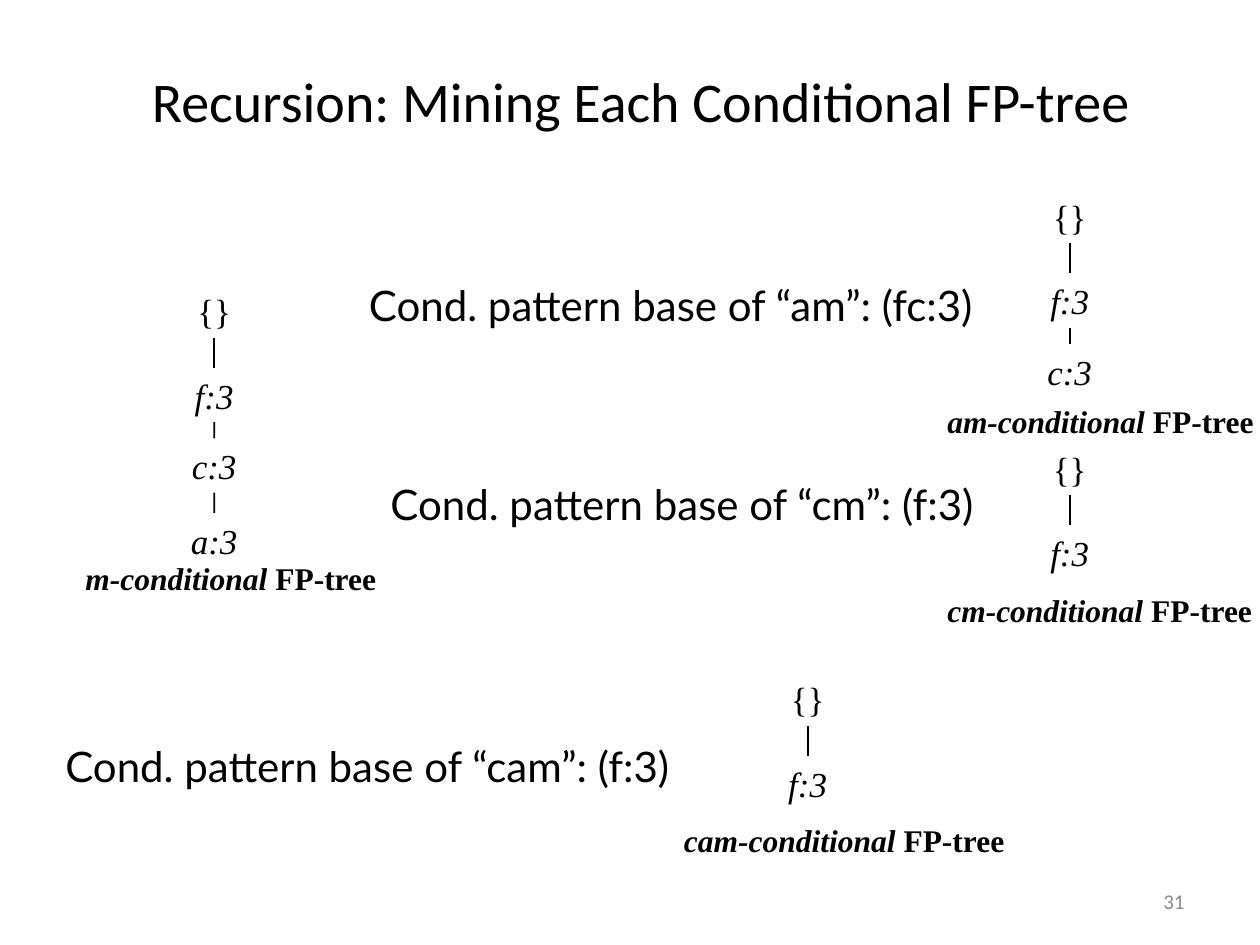
from pptx import Presentation
from pptx.dml.color import RGBColor
from pptx.enum.shapes import MSO_CONNECTOR
from pptx.enum.text import MSO_ANCHOR, MSO_AUTO_SIZE, PP_ALIGN
from pptx.util import Inches, Pt
from lxml import etree

LINE = MSO_CONNECTOR.STRAIGHT
MIDDLE = MSO_ANCHOR.MIDDLE
FIT = MSO_AUTO_SIZE.SHAPE_TO_FIT_TEXT
LEFT, CENTER, RIGHT = PP_ALIGN.LEFT, PP_ALIGN.CENTER, PP_ALIGN.RIGHT

COLORS = {"ink": "000000", "number": "8C8C8C"}
SERIF = "Times New Roman"
TITLE = "Recursion: Mining Each Conditional FP-tree"
NUMBER = "31"

# centre x, top, nodes below the root, name, label (left, top, width)
TREES = [
    (1.7, 2.25, ["f:3", "c:3", "a:3"], "m", (0.58, 4.39, 2.51)),
    (8.49, 1.5, ["f:3", "c:3"], "am", (7.42, 3.14, 2.64)),
    (8.49, 3.5, ["f:3"], "cm", (7.42, 4.64, 2.62)),
    (6.41, 5.33, ["f:3"], "cam", (5.33, 6.47, 2.75)),
]
# text, left, top, width
BASES = [
    ("Cond. pattern base of “am”: (fc:3)", 2.83, 2.17, 5.26),
    ("Cond. pattern base of “cm”: (f:3)", 3, 3.75, 5.09),
    ("Cond. pattern base of “cam”: (f:3)", 0.42, 5.83, 5.26),
]
DROPS = [0, 0.67, 1.23, 1.82]
WIDTHS = {"{}": 0.47, "f:3": 0.51, "c:3": 0.56, "a:3": 0.57}
NODE_H = 0.43
CXN_TOP, CXN_BOTTOM = 0, 2
NS = "http://schemas.openxmlformats.org/drawingml/2006/main"


def add_run(para, text, font, size, bold=False, italic=False, color="ink"):
    run = para.add_run()
    run.text = text
    run.font.name = font
    run.font.size = Pt(size)
    run.font.bold = bold
    run.font.italic = italic
    run.font.color.rgb = RGBColor.from_string(COLORS[color])


def add_box(shapes, left, top, width, height, align=LEFT):
    """Add a text box that fits its one line; return it and its paragraph."""
    box = shapes.add_textbox(*map(Inches, (left, top, width, height)))
    box.text_frame.word_wrap = False
    box.text_frame.auto_size = FIT
    para = box.text_frame.paragraphs[0]
    para.alignment = align
    return box, para


def add_edge(shapes, upper, lower):
    edge = shapes.add_connector(LINE, 0, 0, 0, 0)
    edge.begin_connect(upper, CXN_BOTTOM)
    edge.end_connect(lower, CXN_TOP)
    edge.line.width = Pt(1)
    edge.line.color.rgb = RGBColor.from_string(COLORS["ink"])
    etree.SubElement(edge._element.spPr, f"{{{NS}}}effectLst")


def add_tree(slide, mid, top, items, name, label):
    shapes = slide.shapes.add_group_shape().shapes
    nodes = []
    for text, drop in zip(["{}"] + items, DROPS):
        width = WIDTHS[text]
        node, para = add_box(shapes, mid - width / 2, top + drop, width, NODE_H, CENTER)
        add_run(para, text, SERIF, 20, italic=text != "{}")
        nodes.append(node)
    for upper, lower in zip(nodes, nodes[1:]):
        add_edge(shapes, upper, lower)
    para = add_box(shapes, *label, 0.4)[1]
    add_run(para, f"{name}-conditional ", SERIF, 18, bold=True, italic=True)
    add_run(para, "FP-tree", SERIF, 18, bold=True)


def main():
    deck = Presentation()
    deck.slide_width, deck.slide_height = Inches(10), Inches(7.5)
    slide = deck.slides.add_slide(deck.slide_layouts[5])

    title = slide.shapes.title
    title.left, title.top = Inches(0.42), Inches(0.42)
    title.width, title.height = Inches(9.34), Inches(0.75)
    title.text_frame.vertical_anchor = MIDDLE
    para = title.text_frame.paragraphs[0]
    para.alignment = CENTER
    add_run(para, TITLE, "Calibri", 32)

    for tree in TREES:
        add_tree(slide, *tree)
    for text, left, top, width in BASES:
        para = add_box(slide.shapes, left, top, width, 0.5)[1]
        add_run(para, text, "Lato", 24)

    box, para = add_box(slide.shapes, 7.17, 6.95, 2.33, 0.4, RIGHT)
    box.text_frame.word_wrap = True
    box.text_frame.auto_size = MSO_AUTO_SIZE.NONE
    box.text_frame.vertical_anchor = MIDDLE
    add_run(para, NUMBER, "Calibri", 12, color="number")

    deck.save("out.pptx")


if __name__ == "__main__":
    main()
